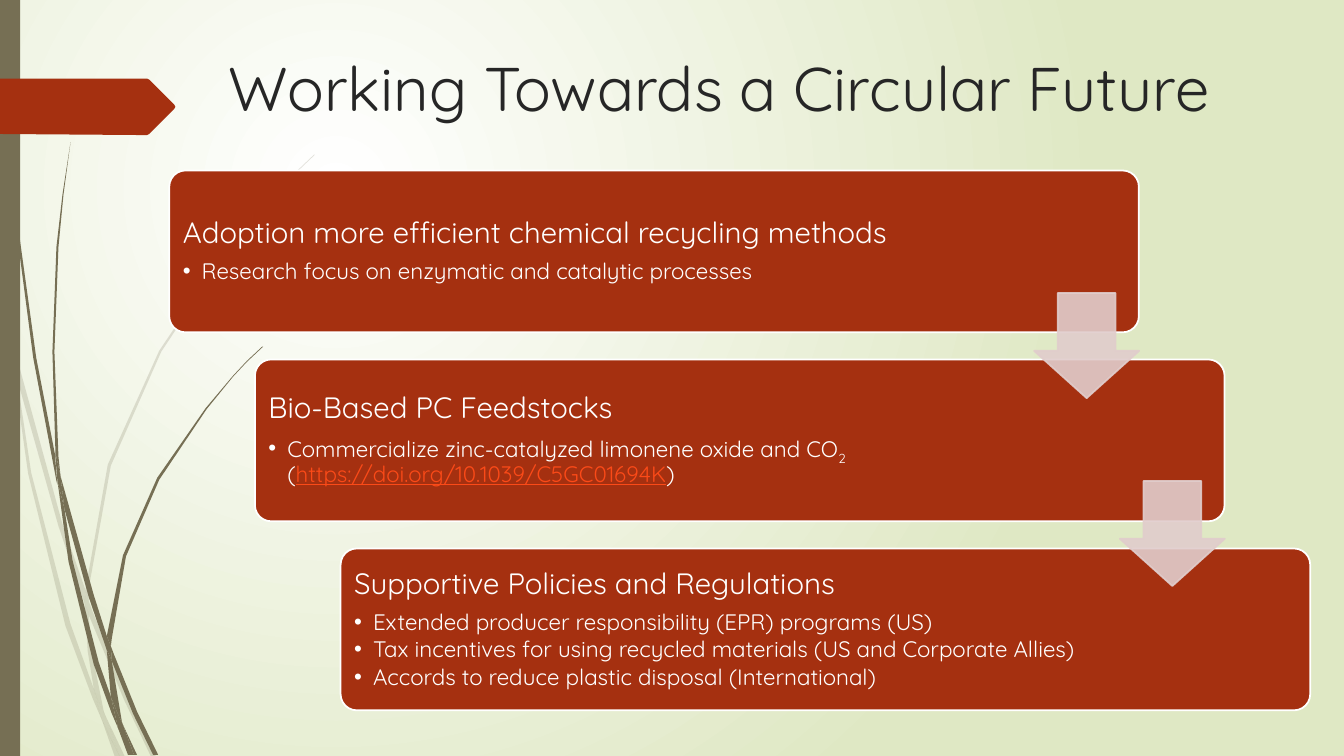
from lxml import etree
from pptx import Presentation
from pptx.dml.color import RGBColor
from pptx.enum.shapes import MSO_SHAPE
from pptx.enum.text import MSO_ANCHOR, PP_ALIGN
from pptx.oxml.ns import qn
from pptx.util import Pt

RECTANGLE = MSO_SHAPE.RECTANGLE
ROUNDED = MSO_SHAPE.ROUNDED_RECTANGLE
DOWN_ARROW = MSO_SHAPE.DOWN_ARROW
TOP, MIDDLE = MSO_ANCHOR.TOP, MSO_ANCHOR.MIDDLE
LEFT = PP_ALIGN.LEFT

WHITE, GREEN, OLIVE = "FFFFFF", "DFE8C4", "766F54"
RUST, ROSE, INK, LINK = "A53010", "E1CDCC", "262626", "FB4A18"

# Outlines are drawn on a grid of 0.72 pt
GRID = Pt(0.72)
PALE_GRASS = [
    [(11, 350), (9, 322), (0, 282), (0, 299), (10, 344)],
    [(58, 522), (84, 599), (85, 586), (62, 520), (14, 345), (17, 376)],
    [(92, 607), (88, 596), (88, 610), (123, 694), (150, 751), (155, 751), (127, 692)],
    [(119, 751), (124, 751), (105, 711)],
    [(93, 683), (70, 619), (31, 469), (17, 376), (11, 350), (28, 470), (65, 621),
     (92, 693), (101, 714), (99, 707)],
    [(84, 599), (87, 646), (93, 683), (96, 692), (105, 711), (103, 706), (91, 646),
     (88, 610), (88, 608)],
    [(88, 584), (110, 462), (160, 349), (229, 245), (268, 198), (290, 175), (312, 154),
     (312, 153), (289, 175), (268, 197), (228, 244), (158, 348), (107, 461), (85, 584),
     (85, 586), (88, 596)],
    [(101, 714), (114, 751), (119, 751)],
    [(88, 608), (88, 610), (88, 596), (85, 586), (84, 599)],
    [(96, 692), (93, 683), (99, 707), (101, 714), (119, 751), (105, 711)],
]
DARK_GRASS = [
    [(7, 110), (17, 233), (33, 355), (56, 477), (57, 481), (55, 457), (55, 453),
     (36, 355), (19, 232), (8, 109), (5, 48), (4, 0), (3, 0), (4, 48)],
    [(88, 592), (106, 645), (106, 633), (106, 631), (93, 590), (60, 472), (64, 505)],
    [(113, 649), (110, 641), (111, 656), (132, 708), (152, 749), (157, 749), (136, 706)],
    [(110, 691), (98, 657), (72, 556), (64, 505), (57, 477), (68, 557), (93, 659),
     (111, 708), (117, 722), (116, 717)],
    [(60, 472), (58, 453), (54, 349), (58, 245), (63, 193), (70, 141), (62, 193),
     (56, 245), (52, 349), (55, 449), (60, 472)],
    [(133, 749), (136, 749), (122, 719)],
    [(57, 477), (64, 505), (60, 472), (55, 449), (55, 453)],
    [(111, 633), (125, 552), (158, 476), (205, 406), (231, 374), (245, 359), (261, 344),
     (260, 344), (245, 358), (231, 373), (204, 405), (156, 474), (122, 551), (106, 631),
     (110, 641)],
    [(117, 722), (127, 749), (131, 749)],
    [(106, 645), (110, 691), (116, 706), (122, 719), (121, 716), (111, 656), (109, 651)],
    [(106, 645), (109, 651), (111, 656), (110, 641), (106, 631), (106, 633)],
    [(116, 706), (110, 691), (116, 717), (117, 722), (130, 749), (133, 749), (122, 719)],
]
TAG = [(173, 108), (148, 133), (146, 134), (136, 134), (0, 133), (0, 78), (136, 78),
       (146, 78), (148, 79), (173, 104), (174, 106)]

# A card has a heading, a text width and bullets; a bullet is a list of (text, style) runs
CARDS = [
    ("Adoption more efficient chemical recycling methods", 568,
     [[("Research focus on enzymatic and catalytic processes", "")]]),
    ("Bio-Based PC Feedstocks", 549.4,
     [[("Commercialize zinc-catalyzed limonene oxide and CO", ""), ("2", "subscript"),
       (" (", ""), ("https://doi.org/10.1039/C5GC01694K", "link"), (")", "")]]),
    ("Supportive Policies and Regulations", 549.4,
     [[("Extended producer responsibility (EPR) programs (US)", "")],
      [("Tax incentives for using recycled materials (US and Corporate Allies)", "")],
      [("Accords to reduce plastic disposal (International)", "")]]),
]


def color(hex_text):
    return RGBColor.from_string(hex_text)


class SlideBuilder:
    font = "Quicksand"

    def __init__(self, slide):
        self.slide = slide

    def background(self, inner, outer):
        fill = self.slide.background.fill
        fill.gradient()
        for stop, shade in zip(fill.gradient_stops, (inner, outer)):
            stop.color.rgb = color(shade)
        gradient = self.slide.background._cSld.find(".//" + qn("a:gradFill"))
        gradient.remove(gradient.find(qn("a:lin")))
        circle = etree.SubElement(gradient, qn("a:path"), path="circle")
        etree.SubElement(circle, qn("a:fillToRect"), l="50000", t="50000", r="100000", b="100000")

    def paint(self, shape, fill, line=None, opacity=100):
        shape.shadow.inherit = False
        shape.fill.solid()
        shape.fill.fore_color.rgb = color(fill)
        if line:
            shape.line.color.rgb = color(line)
            shape.line.width = Pt(1.25)
        else:
            shape.line.fill.background()
        if opacity < 100:
            for shade in shape._element.spPr.iter(qn("a:srgbClr")):
                etree.SubElement(shade, qn("a:alpha"), val=str(opacity * 1000))

    def shape(self, kind, box, fill, line=None, opacity=100, adjustments=()):
        shape = self.slide.shapes.add_shape(kind, *(Pt(length) for length in box))
        for index, value in enumerate(adjustments):
            shape.adjustments[index] = value
        self.paint(shape, fill, line, opacity)

    def outline(self, points, fill, opacity=100):
        builder = self.slide.shapes.build_freeform(*points[0], scale=GRID)
        builder.add_line_segments(points[1:])
        self.paint(builder.convert_to_shape(), fill, opacity=opacity)

    def format_run(self, run, size, shade):
        run.font.name = self.font
        run.font.size = Pt(size)
        run.font.color.rgb = color(shade)

    def title(self, text, box):
        title = self.slide.shapes.title
        title.left, title.top, title.width, title.height = (Pt(length) for length in box)
        frame = title.text_frame
        frame.text = text
        frame.vertical_anchor = TOP
        frame.paragraphs[0].alignment = LEFT
        self.format_run(frame.paragraphs[0].runs[0], 44, INK)

    def paragraph(self, paragraph, runs, size, space_after):
        paragraph.alignment = LEFT
        paragraph.line_spacing = 0.9
        paragraph.space_after = Pt(space_after)
        for text, style in runs:
            run = paragraph.add_run()
            run.text = text
            self.format_run(run, size, LINK if style == "link" else WHITE)
            if style == "link":
                run.font.underline = True
            elif style == "subscript":
                run._r.get_or_add_rPr().set("baseline", "-25000")

    def card_text(self, box, heading, bullets):
        frame = self.slide.shapes.add_textbox(*(Pt(length) for length in box)).text_frame
        frame.word_wrap = True
        frame.vertical_anchor = MIDDLE
        frame.margin_left = frame.margin_right = Pt(6.3)
        frame.margin_top = frame.margin_bottom = Pt(6.3)
        self.paragraph(frame.paragraphs[0], [(heading, "")], 21, 7.35)
        for runs in bullets:
            paragraph = frame.add_paragraph()
            paragraph.level = 1
            self.paragraph(paragraph, runs, 16, 2.4)
            properties = paragraph._p.get_or_add_pPr()
            properties.set("marL", str(Pt(13.5)))
            properties.set("indent", str(Pt(-13.5)))
            etree.SubElement(properties, qn("a:buFont"), typeface="Arial")
            etree.SubElement(properties, qn("a:buChar"), char="•")


def main():
    presentation = Presentation()
    presentation.slide_width, presentation.slide_height = Pt(960), Pt(540)
    builder = SlideBuilder(presentation.slides.add_slide(presentation.slide_layouts[5]))

    # Backdrop: gradient, grass, side bar and tag
    builder.background(WHITE, GREEN)
    for points in PALE_GRASS:
        builder.outline(points, OLIVE, opacity=20)
    for points in DARK_GRASS:
        builder.outline(points, OLIVE)
    builder.shape(RECTANGLE, (0, 0, 14.4, 540), OLIVE)
    builder.outline(TAG, RUST)

    builder.title("Working Towards a Circular Future", (156.2, 32.4, 779.8, 65.5))

    # Staircase of cards, then the arrows over their joints
    for index, (heading, text_width, bullets) in enumerate(CARDS):
        left, top = 120.9 + 61.2 * index, 121.8 + 135 * index
        builder.shape(ROUNDED, (left, top, 692.6, 115.6), RUST, WHITE, adjustments=[0.1])
        builder.card_text((left + 3.4, top + 3.4, text_width, 108.8), heading, bullets)
    for index in range(len(CARDS) - 1):
        builder.shape(DOWN_ARROW, (738.7 + 61.2 * index, 209.4 + 134.2 * index, 75, 75),
                      ROSE, ROSE, 90, [0.55, 0.45])

    presentation.save("out.pptx")


if __name__ == "__main__":
    main()
